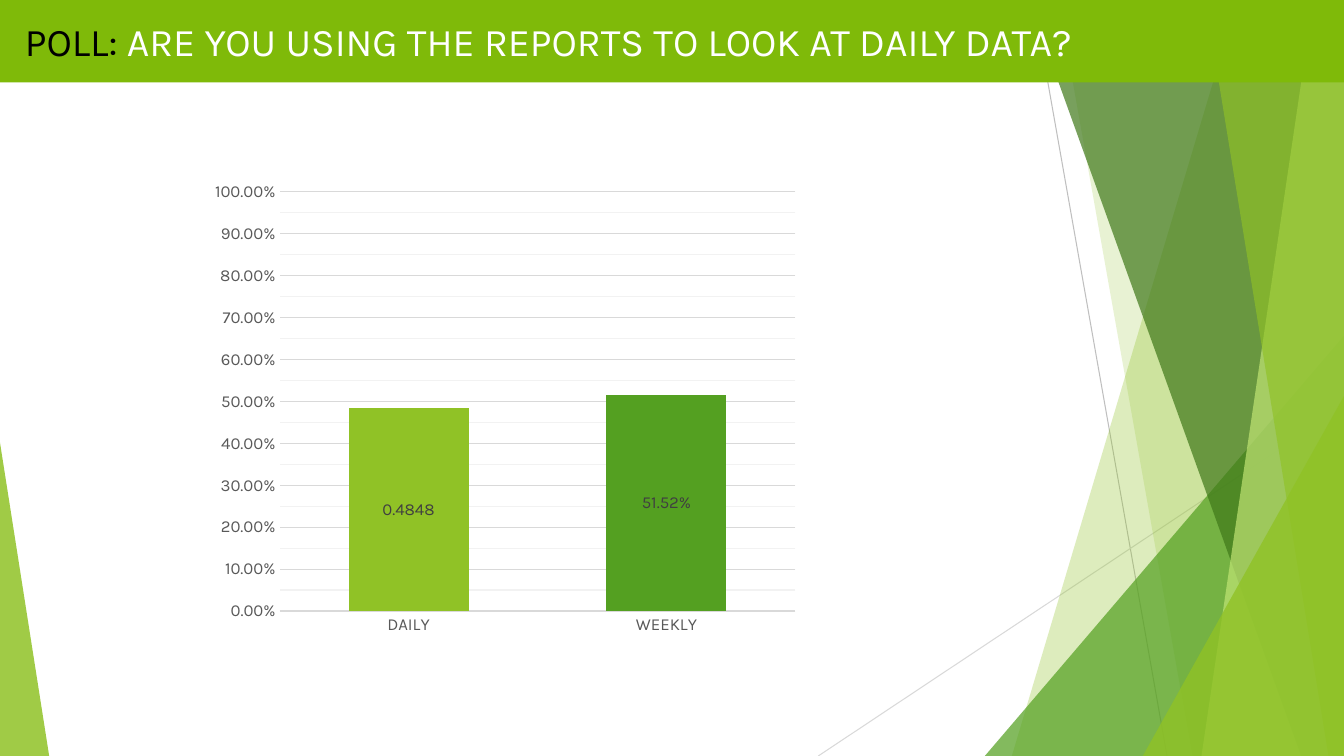
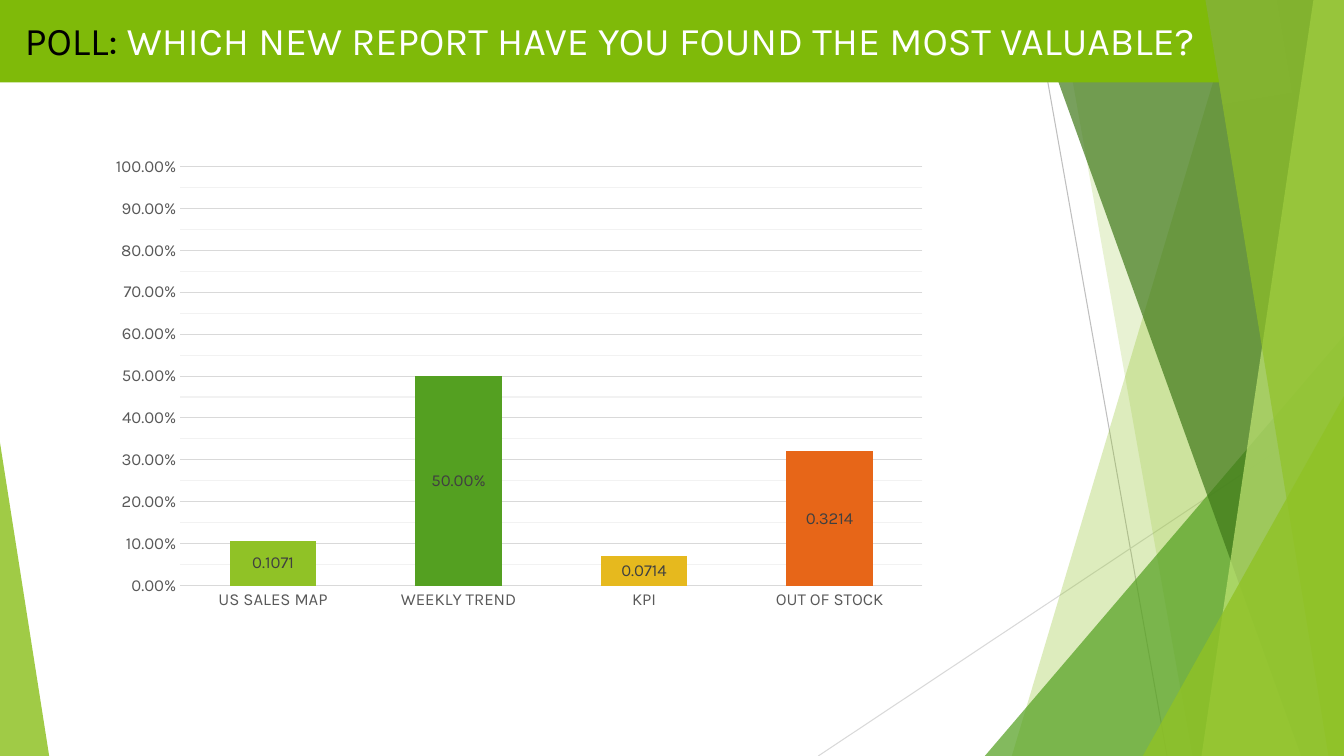
import copy
from dataclasses import dataclass

import lxml.etree
import pptx
import pptx.chart.data
import pptx.dml.color
import pptx.enum.chart
import pptx.enum.shapes
import pptx.oxml.ns
import pptx.util
from pptx.util import Cm

qn = pptx.oxml.ns.qn
ShapeKind = pptx.enum.shapes.MSO_SHAPE


@dataclass(frozen=True)
class Theme:
    font: str = "Karla"
    title_size: int = 28
    chart_size: int = 12
    hairline: float = 0.75
    band: str = "7FBA09"
    patch: str = "83B330"
    title_lead: str = "000000"
    title: str = "FFFFFF"
    lime: str = "90C226"
    green: str = "54A021"
    forest: str = "3F7819"
    pale: str = "C0E474"
    yellow: str = "E6B91E"
    orange: str = "E76618"
    axis_text: str = "595959"
    label_text: str = "404040"
    grid: str = "D9D9D9"
    minor_grid: str = "F2F2F2"
    dark_ray: str = "BFBFBF"


THEME = Theme()
SLIDE_WIDTH, SLIDE_HEIGHT = 33.87, 19.05
BAND_HEIGHT = 2.08
PERCENT = "0.00%"


@dataclass(frozen=True)
class Ray:
    start: tuple[float, float]
    end: tuple[float, float]
    colour: str


@dataclass(frozen=True)
class Facet:
    """A sheet from a slanted left edge to the right edge of the slide."""
    top_x: float
    bottom_x: float
    colour: str
    opacity: int


@dataclass(frozen=True)
class Corner:
    """A right triangle standing on the bottom edge of the slide."""
    left: float
    top: float
    width: float
    apex: float
    colour: str
    opacity: int


@dataclass(frozen=True)
class Bar:
    category: str
    value: float
    colour: str
    label_format: str = "General"


@dataclass(frozen=True)
class Poll:
    question: str
    title_top: float
    band_width: float
    chart_frame: tuple[float, float, float, float]
    plot_left: float
    plot_width: float
    bars: tuple[Bar, ...]
    has_patch: bool = False


RAYS = (
    Ray((26.04, 0), (29.41, SLIDE_HEIGHT), THEME.dark_ray),
    Ray((SLIDE_WIDTH, 10.24), (20.62, SLIDE_HEIGHT), THEME.grid),
)
BACKDROP = (
    Facet(31.19, 25.5, THEME.lime, 30),
    Facet(26.67, 30.05, THEME.lime, 20),
    Corner(24.82, 8.46, 9.05, 1, THEME.green, 72),
    Facet(25.93, 32.79, THEME.forest, 70),
    Facet(33.1, 30.28, THEME.pale, 70),
    Facet(30.38, 33.48, THEME.lime, 65),
    Corner(28.8, 9.98, 5.07, 1, THEME.lime, 80),
    Corner(0, 11.15, 1.24, 0, THEME.lime, 85),
)
POLLS = (
    Poll(
        "ARE YOU USING THE REPORTS TO LOOK AT DAILY DATA?",
        0.3, SLIDE_WIDTH, (4.57, 4.09, 15.49, 13.56), 0.16, 0.84,
        (
            Bar("DAILY", 0.4848, THEME.lime),
            Bar("WEEKLY", 0.5152, THEME.green, PERCENT),
        ),
    ),
    Poll(
        "WHICH NEW REPORT HAVE YOU FOUND THE MOST VALUABLE?",
        0.28, 31.88, (2.92, 3.45, 22.58, 13.56), 0.07, 0.83,
        (
            Bar("US SALES MAP", 0.1071, THEME.lime),
            Bar("WEEKLY TREND", 0.5, THEME.green, PERCENT),
            Bar("KPI", 0.0714, THEME.yellow),
            Bar("OUT OF STOCK", 0.3214, THEME.orange),
        ),
        has_patch=True,
    ),
)


def rgb(colour: str) -> pptx.dml.color.RGBColor:
    return pptx.dml.color.RGBColor.from_string(colour)


def paint(shape, colour: str, opacity: int = 100) -> None:
    shape.shadow.inherit = False
    shape.line.fill.background()
    shape.fill.solid()
    shape.fill.fore_color.rgb = rgb(colour)
    if opacity < 100:
        tint = next(shape.element.spPr.iter(qn("a:srgbClr")))
        lxml.etree.SubElement(tint, qn("a:alpha"), val=str(opacity * 1000))


def style_line(line, colour: str) -> None:
    line.color.rgb = rgb(colour)
    line.width = pptx.util.Pt(THEME.hairline)


def style_font(font, size: int, colour: str) -> None:
    font.name = THEME.font
    font.size = pptx.util.Pt(size)
    font.color.rgb = rgb(colour)


def add_ray(page, ray: Ray) -> None:
    ends = [Cm(length) for length in (*ray.start, *ray.end)]
    connector = page.shapes.add_connector(
        pptx.enum.shapes.MSO_CONNECTOR.STRAIGHT, *ends)
    style_line(connector.line, ray.colour)
    lxml.etree.SubElement(connector.element.spPr, qn("a:effectLst"))


def add_facet(page, facet: Facet) -> None:
    outline = page.shapes.build_freeform(Cm(facet.top_x), 0)
    outline.add_line_segments([
        (Cm(SLIDE_WIDTH), 0),
        (Cm(SLIDE_WIDTH), Cm(SLIDE_HEIGHT)),
        (Cm(facet.bottom_x), Cm(SLIDE_HEIGHT)),
    ])
    paint(outline.convert_to_shape(), facet.colour, facet.opacity)


def add_corner(page, corner: Corner) -> None:
    shape = page.shapes.add_shape(
        ShapeKind.ISOSCELES_TRIANGLE, Cm(corner.left), Cm(corner.top),
        Cm(corner.width), Cm(SLIDE_HEIGHT - corner.top))
    shape.adjustments[0] = corner.apex
    paint(shape, corner.colour, corner.opacity)


def add_backdrop(page) -> None:
    for ray in RAYS:
        add_ray(page, ray)
    for piece in BACKDROP:
        if isinstance(piece, Facet):
            add_facet(page, piece)
        else:
            add_corner(page, piece)


def add_title(page, poll: Poll) -> None:
    band = page.shapes.add_shape(
        ShapeKind.RECTANGLE, 0, 0, Cm(poll.band_width), Cm(BAND_HEIGHT))
    paint(band, THEME.band)
    left = 0.38
    box = page.shapes.add_textbox(
        Cm(left), Cm(poll.title_top), Cm(SLIDE_WIDTH - left), Cm(BAND_HEIGHT))
    box.text_frame.word_wrap = True
    para = box.text_frame.paragraphs[0]
    for words, colour in (("POLL: ", THEME.title_lead),
                          (poll.question, THEME.title)):
        span = para.add_run()
        span.text = words
        style_font(span.font, THEME.title_size, colour)


def place_plot(chart, left: float, width: float) -> None:
    """Fix the inner plot area, in fractions of the chart frame."""
    plot_area = next(chart.element.iter(qn("c:plotArea")))
    for old_layout in plot_area.findall(qn("c:layout")):
        plot_area.remove(old_layout)
    layout = lxml.etree.Element(qn("c:layout"))
    manual = lxml.etree.SubElement(layout, qn("c:manualLayout"))
    settings = (
        ("layoutTarget", "inner"), ("xMode", "edge"), ("yMode", "edge"),
        ("x", left), ("y", 0.055), ("w", width), ("h", 0.779),
    )
    for name, value in settings:
        lxml.etree.SubElement(manual, qn(f"c:{name}"), val=str(value))
    plot_area.insert(0, layout)


def style_gridlines(chart) -> None:
    """Style both grids; the minor one takes a copy of the major line format."""
    scale = chart.value_axis
    scale.has_major_gridlines = scale.has_minor_gridlines = True
    major_line = scale.major_gridlines.format.line
    style_line(major_line, THEME.minor_grid)
    major = next(chart.element.iter(qn("c:majorGridlines")))
    minor = next(chart.element.iter(qn("c:minorGridlines")))
    minor.append(copy.deepcopy(major.find(qn("c:spPr"))))
    style_line(major_line, THEME.grid)


def style_axes(chart) -> None:
    for axis in (chart.category_axis, chart.value_axis):
        axis.major_tick_mark = pptx.enum.chart.XL_TICK_MARK.NONE
        axis.minor_tick_mark = pptx.enum.chart.XL_TICK_MARK.NONE
        style_font(axis.tick_labels.font, THEME.chart_size, THEME.axis_text)
    style_line(chart.category_axis.format.line, THEME.grid)
    scale = chart.value_axis
    scale.minimum_scale, scale.maximum_scale = 0, 1
    scale.major_unit, scale.minor_unit = 0.1, 0.05
    scale.format.line.fill.background()
    scale.tick_labels.number_format = PERCENT
    scale.tick_labels.number_format_is_linked = False
    style_gridlines(chart)


def add_poll_chart(page, poll: Poll) -> None:
    """Draw one stacked series per answer, so that each has its own colour."""
    data = pptx.chart.data.CategoryChartData()
    data.categories = [bar.category for bar in poll.bars]
    for number, bar in enumerate(poll.bars, start=1):
        values = [bar.value if other is bar else None for other in poll.bars]
        data.add_series(f"Series {number}", values)
    chart = page.shapes.add_chart(
        pptx.enum.chart.XL_CHART_TYPE.COLUMN_STACKED,
        *[Cm(length) for length in poll.chart_frame], data).chart
    chart.has_title = chart.has_legend = False
    chart.font.name = THEME.font
    chart.font.size = pptx.util.Pt(THEME.chart_size)
    style_axes(chart)
    place_plot(chart, poll.plot_left, poll.plot_width)
    plot = chart.plots[0]
    plot.gap_width, plot.overlap = 115, 100
    plot.vary_by_categories = False
    for series, bar in zip(plot.series, poll.bars):
        series.format.fill.solid()
        series.format.fill.fore_color.rgb = rgb(bar.colour)
        labels = series.data_labels
        labels.show_value = True
        labels.position = pptx.enum.chart.XL_LABEL_POSITION.CENTER
        labels.number_format = bar.label_format
        labels.number_format_is_linked = False
        style_font(labels.font, THEME.chart_size, THEME.label_text)


def add_patch(page) -> None:
    """Hide the right end of the band behind a tilted block."""
    patch = page.shapes.add_shape(
        ShapeKind.RECTANGLE, Cm(30.02), Cm(0.18), Cm(2.87), Cm(1.78))
    patch.rotation = 80.6
    paint(patch, THEME.patch)


def main() -> None:
    deck = pptx.Presentation()
    deck.slide_width, deck.slide_height = Cm(SLIDE_WIDTH), Cm(SLIDE_HEIGHT)
    blank = deck.slide_layouts[6]
    for poll in POLLS:
        page = deck.slides.add_slide(blank)
        add_backdrop(page)
        add_title(page, poll)
        add_poll_chart(page, poll)
        if poll.has_patch:
            add_patch(page)
    deck.save("out.pptx")


if __name__ == "__main__":
    main()
